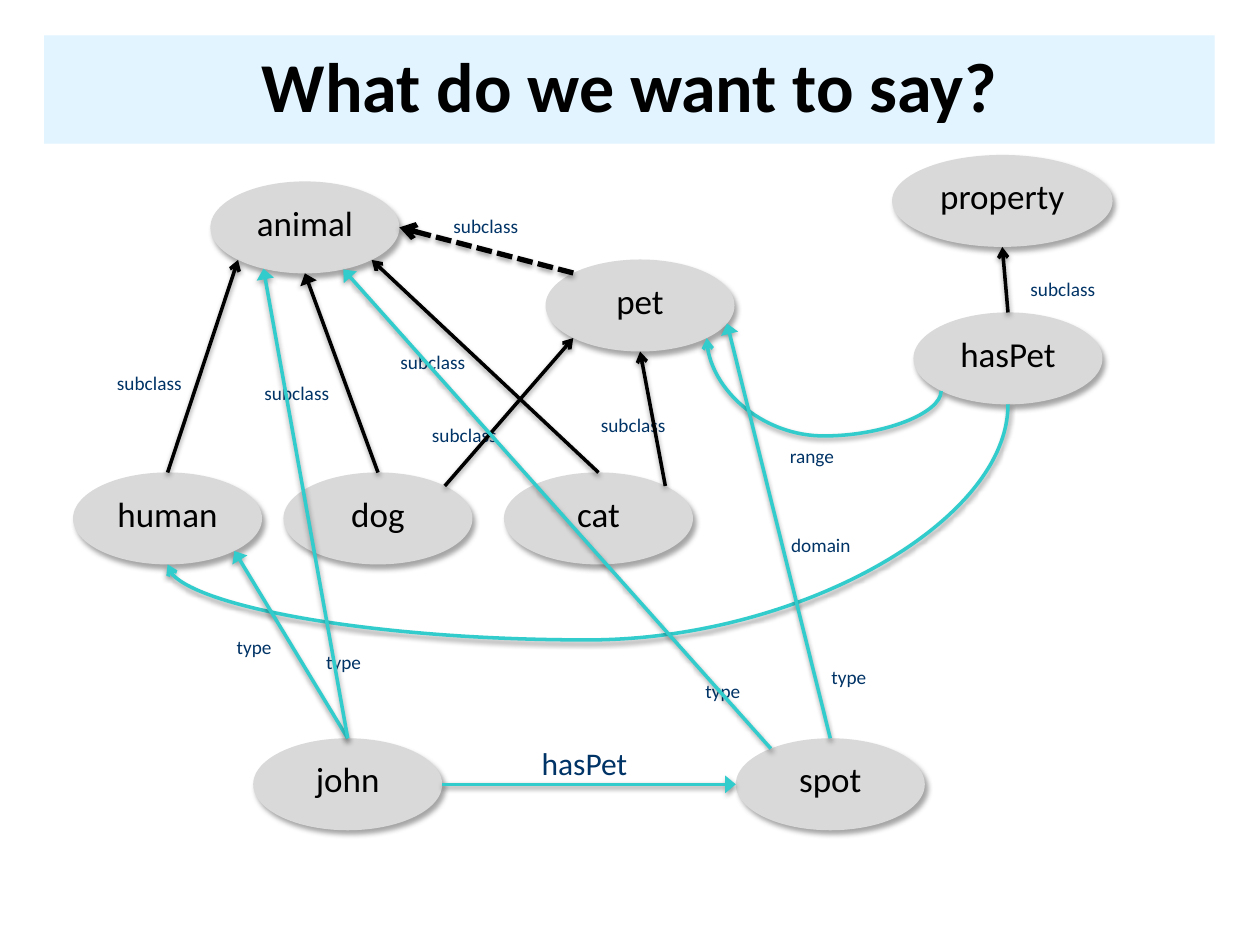
"""Build a slide showing a small class and property graph."""
from math import cos, radians, sin

from lxml.etree import SubElement
from pptx import Presentation
from pptx.dml.color import RGBColor
from pptx.enum.dml import MSO_LINE
from pptx.enum.shapes import MSO_CONNECTOR as CXN, MSO_SHAPE as SHAPE
from pptx.enum.text import MSO_ANCHOR as ANCHOR, PP_ALIGN as ALIGN
from pptx.oxml.ns import qn
from pptx.util import Inches, Pt

BLACK = RGBColor(0x00, 0x00, 0x00)
GREY = RGBColor(0xD9, 0xD9, 0xD9)
SHADE = RGBColor(0x80, 0x80, 0x80)
PALE = RGBColor(0xE1, 0xF4, 0xFF)
NAVY = RGBColor(0x00, 0x33, 0x66)
TEAL = RGBColor(0x33, 0xCC, 0xCC)

FONT = "Calibri"
NODE_W, NODE_H = 1.5, 0.73
RIGHT, LOW_RIGHT, BOTTOM, LOW_LEFT = 0, 45, 90, 135
LEFT, UP_LEFT, TOP, UP_RIGHT = 180, 225, 270, 315

NODES = {
    "animal": (1.67, 1.44, NODE_W),
    "cat": (4, 3.75, NODE_W),
    "dog": (2.25, 3.75, NODE_W),
    "human": (0.58, 3.75, NODE_W),
    "pet": (4.33, 2.06, NODE_W),
    "property": (7.08, 1.23, 1.75),
    "hasPet": (7.25, 2.48, NODE_W),
    "john": (2.01, 5.86, NODE_W),
    "spot": (5.84, 5.86, NODE_W),
}
SUBCLASS_EDGES = [
    ("human", TOP, "animal", LOW_LEFT),
    ("cat", TOP, "animal", LOW_RIGHT),
    ("dog", UP_RIGHT, "pet", LOW_LEFT),
    ("cat", UP_RIGHT, "pet", BOTTOM),
    ("hasPet", TOP, "property", BOTTOM),
]
TYPE_EDGES = [
    ("john", RIGHT, "spot", LEFT),
    ("john", TOP, "human", LOW_RIGHT),
    ("john", TOP, "animal", 116),
    ("spot", 231, "animal", 66),
    ("spot", TOP, "pet", 23),
]
CURVES = [
    ("hasPet", BOTTOM, "human", BOTTOM, 5.08),
    ("hasPet", LOW_LEFT, "pet", LOW_RIGHT, 3.46),
]
LABELS = [
    ("subclass", 11, 0.72, 0.29,
     [(0.83, 2.9), (3.08, 2.73), (2, 2.98), (8.08, 2.15),
      (3.5, 1.65), (3.33, 3.31), (4.67, 3.23)]),
    ("domain", 11, 0.68, 0.29, [(6.18, 4.18)]),
    ("range", 11, 0.56, 0.29, [(6.17, 3.48)]),
    ("type", 11, 0.48, 0.29,
     [(6.5, 5.23), (5.5, 5.34), (2.49, 5.11), (1.78, 4.99)]),
    ("hasPet", 18, 0.89, 0.4, [(4.2, 5.86)]),
]


def format_run(p, size, color, bold=False):
    """Set the font of a paragraph's only run."""
    f = p.runs[0].font
    f.name, f.size, f.bold = FONT, Pt(size), bold
    f.color.rgb = color


def add_shadow(s, color, alpha, dist, angle):
    """Give a shape or connector a soft outer shadow."""
    effects = SubElement(s._element.spPr, qn("a:effectLst"))
    shadow = SubElement(effects, qn("a:outerShdw"), blurRad=str(Pt(3.1)),
                        dist=str(Pt(dist)), dir=str(angle * 60000),
                        rotWithShape="0")
    clr = SubElement(shadow, qn("a:srgbClr"), val=str(color))
    SubElement(clr, qn("a:alpha"), val=str(alpha * 1000))


def add_title(slide, text):
    """Fill and format the title placeholder."""
    s = slide.shapes.title
    s.left, s.top, s.width, s.height = map(Inches, (0.35, 0.28, 9.29, 0.86))
    s.fill.solid()
    s.fill.fore_color.rgb = PALE
    tf = s.text_frame
    tf.text = text
    tf.vertical_anchor = ANCHOR.MIDDLE
    p = tf.paragraphs[0]
    p.alignment, p.line_spacing = ALIGN.CENTER, 0.9
    format_run(p, 40, BLACK, bold=True)


def add_node(slide, name):
    """Draw a named ellipse."""
    x, y, w = NODES[name]
    s = slide.shapes.add_shape(SHAPE.OVAL, *map(Inches, (x, y, w, NODE_H)))
    s.fill.solid()
    s.fill.fore_color.rgb = GREY
    s.line.fill.background()
    add_shadow(s, SHADE, 69, 3, 56)
    tf = s.text_frame
    tf.text = name
    tf.vertical_anchor = ANCHOR.TOP
    p = tf.paragraphs[0]
    p.alignment = ALIGN.CENTER
    format_run(p, 20, BLACK)


def add_label(slide, text, size, box):
    """Place an edge label on a single line."""
    tf = slide.shapes.add_textbox(*map(Inches, box)).text_frame
    tf.word_wrap = False
    tf.text = text
    format_run(tf.paragraphs[0], size, NAVY)


def rim(name, angle):
    """Return the point on a node's rim, clockwise from the right."""
    x, y, w = NODES[name]
    a = radians(angle)
    return x + w / 2 * (1 + cos(a)), y + NODE_H / 2 * (1 + sin(a))


def style_line(c, color, head, width=2, dash=None):
    """Format a connector and put an arrowhead at its end."""
    c.line.color.rgb = color
    c.line.width = Pt(width)
    if dash:
        c.line.dash_style = dash
    breadth = "lg" if head == "triangle" else "med"
    SubElement(c.line._get_or_add_ln(), qn("a:tailEnd"), type=head, w=breadth)
    add_shadow(c, BLACK, 38, 1.6, 90)


def add_edge(slide, source, start, target, end, color, head, **style):
    """Join two nodes with a straight arrow."""
    points = map(Inches, rim(source, start) + rim(target, end))
    c = slide.shapes.add_connector(CXN.STRAIGHT, *points)
    style_line(c, color, head, **style)


def add_curve(slide, source, start, target, end, depth):
    """Join two nodes with an arrow that dips to the given depth."""
    (x1, y1), (x2, y2) = rim(source, start), rim(target, end)
    cx, cy = (x1 + x2) / 2, (y1 + y2) / 2
    dx, dy = (y2 - y1) / 2, (x1 - x2) / 2
    points = map(Inches, (cx - dx, cy - dy, cx + dx, cy + dy))
    c = slide.shapes.add_connector(CXN.CURVE, *points)
    spPr = c._element.spPr
    spPr.find(qn("a:xfrm")).set("rot", str(90 * 60000))
    guides = spPr.find(qn("a:prstGeom")).get_or_add_avLst()
    bend = round((depth - y1) / (y2 - y1) * 100000)
    SubElement(guides, qn("a:gd"), name="adj1", fmla=f"val {bend}")
    style_line(c, TEAL, "arrow")


def main():
    """Assemble and save the slide."""
    prs = Presentation()
    prs.slide_width, prs.slide_height = Inches(10), Inches(7.5)
    slide = prs.slides.add_slide(prs.slide_layouts[5])
    add_title(slide, "What do we want to say?")
    for name in NODES:
        add_node(slide, name)
    for text, size, w, h, places in LABELS:
        for x, y in places:
            add_label(slide, text, size, (x, y, w, h))
    for edge in SUBCLASS_EDGES:
        add_edge(slide, *edge, BLACK, "arrow")
    add_edge(slide, "dog", TOP, "animal", BOTTOM, BLACK, "triangle")
    add_edge(slide, "pet", UP_LEFT, "animal", RIGHT, BLACK, "arrow",
             width=3, dash=MSO_LINE.SQUARE_DOT)
    for curve in CURVES:
        add_curve(slide, *curve)
    for edge in TYPE_EDGES:
        add_edge(slide, *edge, TEAL, "triangle")
    prs.save("out.pptx")


if __name__ == "__main__":
    main()
